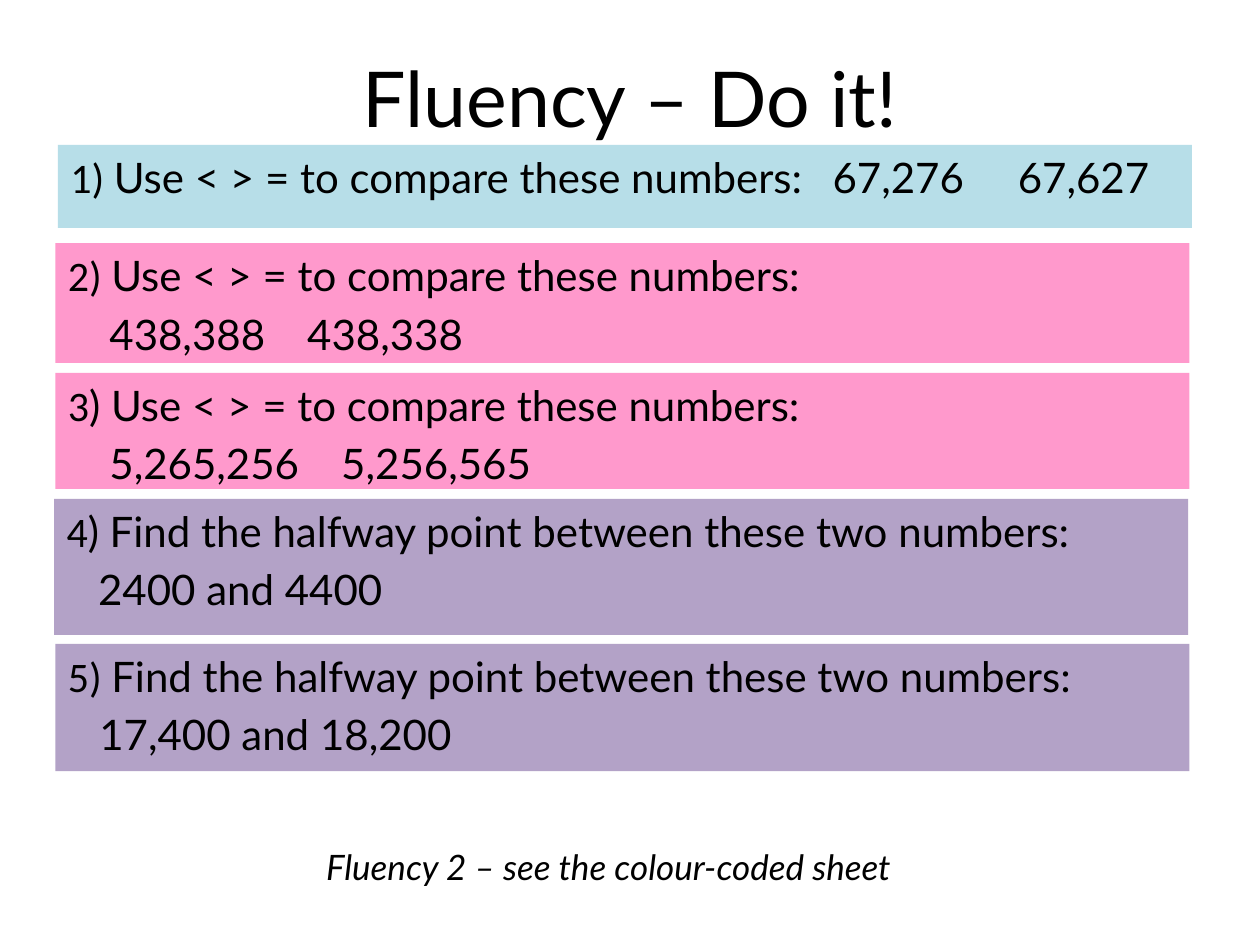
from lxml import etree
from pptx import Presentation, util as u
from pptx.dml.color import RGBColor
from pptx.enum import shapes, text
from pptx.oxml import ns

COLS, ROWS = 100, 75
BLUE, PINK, PURPLE = "B7DEE8", "FF99CC", "B3A2C7"
COMPARE = "Use < > = to compare these numbers:"
HALFWAY = "Find the halfway point between these two numbers:"

prs = Presentation()
prs.slide_width, prs.slide_height = u.Inches(10), u.Inches(7.5)


def color(value):
    return RGBColor.from_string(value)


def place(box):
    x, y, w, h = box
    col, row = prs.slide_width / COLS, prs.slide_height / ROWS
    return [int(n) for n in (x * col, y * row, w * col, h * row)]


def add_run(p, words, size, font="Lato", italic=None):
    r = p.add_run()
    r.text = words
    r.font.name, r.font.size, r.font.italic = font, u.Pt(size), italic
    r.font.color.rgb = color("000000")


def add_tabs(p, stops):
    tab_list = etree.SubElement(p._p.get_or_add_pPr(), ns.qn("a:tabLst"))
    for stop in stops:
        position = str(int(stop * prs.slide_width / COLS))
        etree.SubElement(tab_list, ns.qn("a:tab"), pos=position, algn="l")


def add_label(s, box, words, size, align, anchor, italic=None):
    tf = s.shapes.add_textbox(*place(box)).text_frame
    tf.word_wrap = True
    tf.vertical_anchor = anchor
    p = tf.paragraphs[0]
    p.alignment = align
    add_run(p, words, size, italic=italic)


def add_question(s, box, fill, number, lines, stops):
    sp = s.shapes.add_shape(shapes.MSO_SHAPE.RECTANGLE, *place(box))
    sp.shadow.inherit = False
    sp.fill.solid()
    sp.fill.fore_color.rgb = color(fill)
    sp.line.fill.background()
    tf = sp.text_frame
    tf.word_wrap = True
    tf.vertical_anchor = text.MSO_ANCHOR.TOP
    for i, line in enumerate(lines):
        p = tf.add_paragraph() if i else tf.paragraphs[0]
        p.alignment = text.PP_ALIGN.LEFT
        p.space_before = u.Pt(4.8)
        add_tabs(p, stops)
        if i == 0:
            add_run(p, number, 24, "Calibri")
        add_run(p, line, 24)


def build_slide():
    s = prs.slides.add_slide(prs.slide_layouts[6])
    add_label(s, (5, 3, 90, 9.3), "Fluency – Do it!", 44,
              text.PP_ALIGN.CENTER, text.MSO_ANCHOR.MIDDLE)
    questions = [
        (4.6, 11.5, 6.6, BLUE, "1) ", [COMPARE + "\t67,276\t67,627"], (60.5, 75.2)),
        (4.4, 19.3, 9.5, PINK, "2) ", [COMPARE, "\t438,388\t438,338"], (3.3, 19)),
        (4.4, 29.6, 9.2, PINK, "3", [") " + COMPARE, "\t5,265,256\t5,256,565"], (3.3, 21.7)),
        (4.3, 39.6, 10.8, PURPLE, "4", [") " + HALFWAY, "\t2400 and 4400"], (2.5,)),
        (4.4, 51.1, 10.1, PURPLE, "5) ", [HALFWAY, "\t17,400 and 18,200"], (2.5,)),
    ]
    for x, y, h, fill, number, lines, stops in questions:
        add_question(s, (x, y, 90, h), fill, number, lines, stops)
    add_label(s, (24.9, 66.6, 49.6, 4.7), "Fluency 2 – see the colour-coded sheet", 20,
              text.PP_ALIGN.LEFT, text.MSO_ANCHOR.TOP, italic=True)


if __name__ == "__main__":
    build_slide()
    prs.save("out.pptx")
